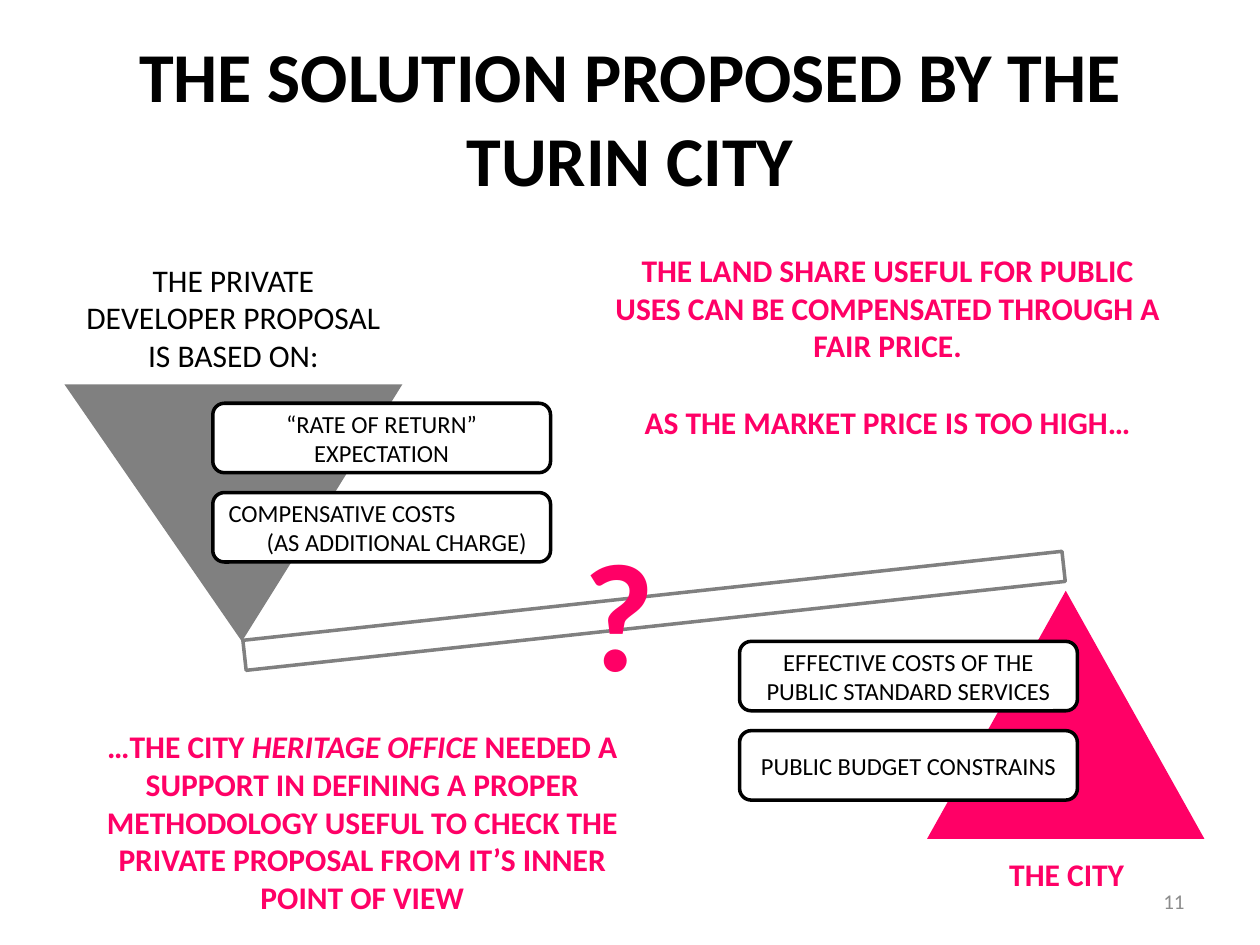
from pptx import Presentation
from pptx.dml.color import RGBColor
from pptx.enum.shapes import MSO_SHAPE
from pptx.enum.text import MSO_ANCHOR, MSO_AUTO_SIZE, PP_ALIGN
from pptx.util import Cm, Pt

BLACK = RGBColor(0x00, 0x00, 0x00)
WHITE = RGBColor(0xFF, 0xFF, 0xFF)
GREY = RGBColor(0x80, 0x80, 0x80)
LIGHT_GREY = RGBColor(0x8C, 0x8C, 0x8C)
PINK = RGBColor(0xFF, 0x00, 0x66)

FONT = "Calibri"
LEFT, CENTER, RIGHT = PP_ALIGN.LEFT, PP_ALIGN.CENTER, PP_ALIGN.RIGHT
MIDDLE, TOP = MSO_ANCHOR.MIDDLE, MSO_ANCHOR.TOP
RECTANGLE = MSO_SHAPE.RECTANGLE
ROUNDED = MSO_SHAPE.ROUNDED_RECTANGLE
TRIANGLE = MSO_SHAPE.ISOSCELES_TRIANGLE

CARD_WIDTH, CARD_HEIGHT, CARD_STEP = 6.81, 1.4, 1.8


def format_text(text_frame, size, color, bold=False, align=CENTER):
    for paragraph in text_frame.paragraphs:
        paragraph.alignment = align
        for run in paragraph.runs:
            run.font.name = FONT
            run.font.size = Pt(size)
            run.font.bold = bold
            run.font.color.rgb = color


def set_title(slide, text):
    title = slide.shapes.title
    title.left, title.top = Cm(1.27), Cm(0.51)
    title.width, title.height = Cm(22.86), Cm(3.68)
    text_frame = title.text_frame
    text_frame.text = text
    text_frame.auto_size = MSO_AUTO_SIZE.NONE
    text_frame.vertical_anchor = MIDDLE
    format_text(text_frame, 40, BLACK, bold=True)


def add_text(slide, box, text, size=18, color=PINK, bold=True,
             align=CENTER, anchor=TOP):
    text_box = slide.shapes.add_textbox(*map(Cm, box))
    text_frame = text_box.text_frame
    text_frame.word_wrap = True
    text_frame.vertical_anchor = anchor
    text_frame.text = text
    format_text(text_frame, size, color, bold, align)
    return text_frame


def add_figure(slide, kind, box, fill=None, line=None, rotation=0):
    shape = slide.shapes.add_shape(kind, *map(Cm, box))
    shape.shadow.inherit = False
    shape.rotation = rotation
    if fill is None:
        shape.fill.background()
    else:
        shape.fill.solid()
        shape.fill.fore_color.rgb = fill
    if line is None:
        shape.line.fill.background()
    else:
        shape.line.color.rgb = line
        shape.line.width = Pt(2)
    return shape


def add_cards(slide, left, top, texts):
    """Stack rounded cards downwards and return their text frames."""
    text_frames = []
    for index, text in enumerate(texts):
        box = (left, top + index * CARD_STEP, CARD_WIDTH, CARD_HEIGHT)
        card = add_figure(slide, ROUNDED, box, WHITE, BLACK)
        text_frame = card.text_frame
        text_frame.word_wrap = True
        text_frame.vertical_anchor = MIDDLE
        text_frame.text = text
        format_text(text_frame, 14, BLACK)
        text_frames.append(text_frame)
    return text_frames


def main():
    presentation = Presentation()
    presentation.slide_width, presentation.slide_height = Cm(25.4), Cm(19.05)
    slide = presentation.slides.add_slide(presentation.slide_layouts[5])
    set_title(slide, "THE SOLUTION PROPOSED BY THE TURIN CITY")

    # Statement on the fair price
    statement = add_text(
        slide, (12.09, 4.93, 11.61, 4.09),
        "THE LAND SHARE USEFUL FOR PUBLIC USES CAN BE COMPENSATED "
        "THROUGH A FAIR PRICE.\nAS THE MARKET PRICE IS TOO HIGH…")
    statement.paragraphs[1].space_before = Pt(22)

    # Tilted beam of the balance
    add_figure(slide, RECTANGLE, (4.88, 12.01, 16.61, 0.61),
               line=GREY, rotation=353.8)

    # Private developer side
    add_text(slide, (1.3, 5.13, 6.81, 2.57),
             "THE PRIVATE DEVELOPER PROPOSAL IS BASED ON:",
             color=BLACK, bold=False)
    developer = add_figure(slide, TRIANGLE, (1.3, 7.75, 6.81, 5.18),
                           GREY, rotation=180)
    developer.adjustments[0] = 0.475
    cards = add_cards(slide, 4.29, 8.13, [
        "“RATE OF RETURN” EXPECTATION",
        "COMPENSATIVE COSTS\n(AS ADDITIONAL CHARGE)"])
    costs = cards[1]
    costs.margin_right = Cm(0.41)
    costs.paragraphs[0].alignment = LEFT
    costs.paragraphs[1].alignment = RIGHT

    # City side
    add_figure(slide, TRIANGLE, (18.69, 11.91, 5.59, 5), PINK)
    add_cards(slide, 14.91, 12.93, [
        "EFFECTIVE COSTS OF THE PUBLIC STANDARD SERVICES",
        "PUBLIC BUDGET CONSTRAINS"])
    add_text(slide, (18.9, 17.12, 5.21, 1.02), "THE CITY")

    # Open question and the need for support
    add_text(slide, (11.51, 10.31, 3, 4.01), "?", size=88, align=LEFT)
    support = add_text(slide, (1.5, 14.53, 11.61, 4.11), "…THE CITY ")
    paragraph = support.paragraphs[0]
    office = paragraph.add_run()
    office.text = "HERITAGE OFFICE "
    office.font.italic = True
    paragraph.add_run().text = (
        "NEEDED A SUPPORT IN DEFINING A PROPER METHODOLOGY USEFUL TO "
        "CHECK THE PRIVATE PROPOSAL FROM IT’S INNER POINT OF VIEW")
    format_text(support, 18, PINK, bold=True)

    # Slide number
    add_text(slide, (18.21, 17.65, 5.92, 1.02), "11", size=12,
             color=LIGHT_GREY, bold=False, align=RIGHT, anchor=MIDDLE)

    presentation.save("out.pptx")


if __name__ == "__main__":
    main()
